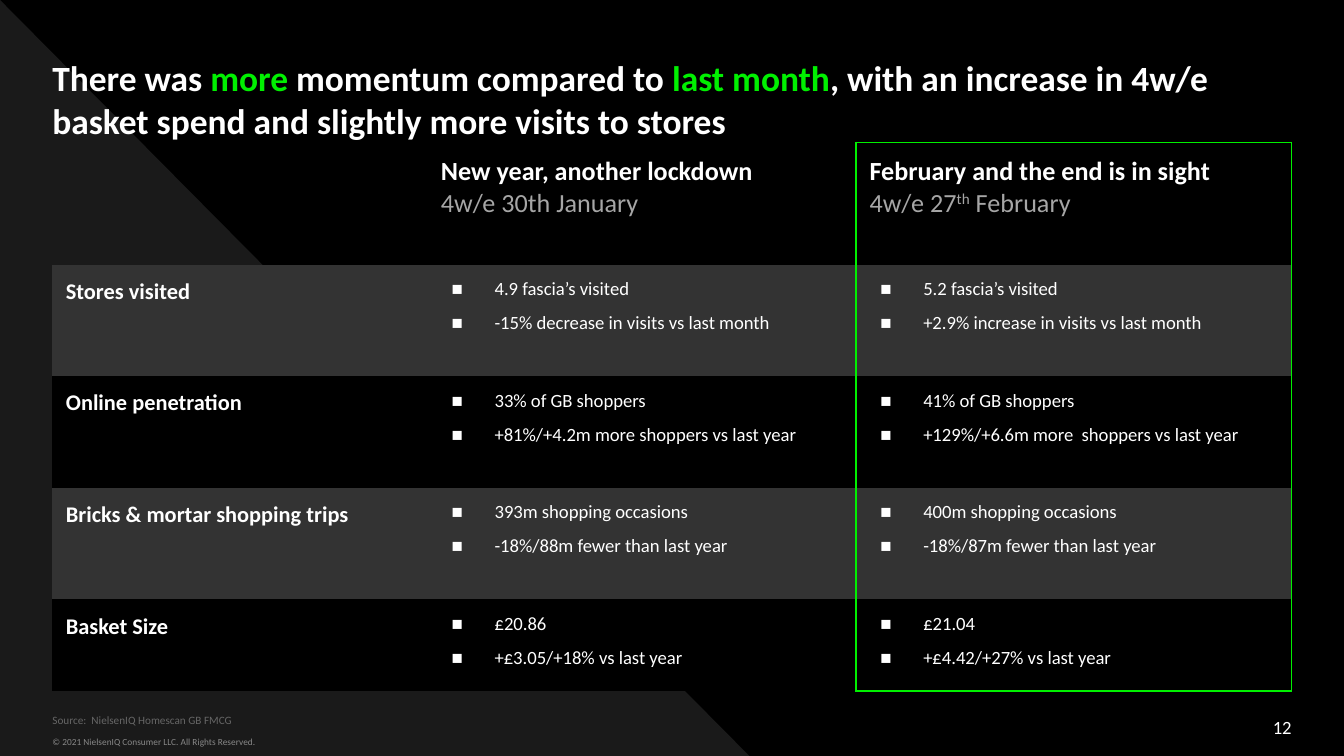
from lxml import etree
from pptx import Presentation
from pptx.dml.color import RGBColor
from pptx.enum.shapes import MSO_SHAPE
from pptx.enum.text import MSO_ANCHOR, PP_ALIGN
from pptx.oxml.ns import qn
from pptx.util import Inches, Pt

TRIANGLE = MSO_SHAPE.RIGHT_TRIANGLE
TOP, MIDDLE = MSO_ANCHOR.TOP, MSO_ANCHOR.MIDDLE
LEFT, RIGHT = PP_ALIGN.LEFT, PP_ALIGN.RIGHT
FONT = "Calibri"
NO_STYLE = "{2D5ABB26-0587-4C30-8999-92F81FD0307C}"
COLORS = {
    "black": "000000", "triangle": "1A1A1A", "band": "333333", "white": "FFFFFF",
    "green": "00F000", "period": "A6A6A6", "source": "666666", "copyright": "888888",
}

TITLE = [
    ("There was ", "white"), ("more", "green"), (" momentum compared to ", "white"),
    ("last month", "green"),
    (", with an increase in 4w/e basket spend and slightly more visits to stores", "white"),
]
SOURCE = "Source:  NielsenIQ Homescan GB FMCG"
COPYRIGHT = "© 2021 NielsenIQ Consumer LLC. All Rights Reserved."
PAGE = "12"
HEADERS = [
    ("New year, another lockdown", ["4w/e 30th January"]),
    ("February and the end is in sight", ["4w/e 27", "th", " February"]),
]
ROWS = [
    ("Stores visited",
     ["4.9 fascia’s visited", "-15% decrease in visits vs last month"],
     ["5.2 fascia’s visited", "+2.9% increase in visits vs last month"]),
    ("Online penetration",
     ["33% of GB shoppers", "+81%/+4.2m more shoppers vs last year"],
     ["41% of GB shoppers", "+129%/+6.6m more  shoppers vs last year"]),
    ("Bricks & mortar shopping trips",
     ["393m shopping occasions", "-18%/88m fewer than last year"],
     ["400m shopping occasions", "-18%/87m fewer than last year"]),
    ("Basket Size",
     ["£20.86", "+£3.05/+18% vs last year"],
     ["£21.04", "+£4.42/+27% vs last year"]),
]
SLIDE_WIDTH = 10
MARGIN, TABLE_TOP = 0.39, 1.06
COL_WIDTHS = [2.79, 3.19, 3.24]
ROW_HEIGHTS = [0.91, 0.83, 0.83, 0.83, 0.68]
WIDTH = sum(COL_WIDTHS)


def rgb(name):
    return RGBColor.from_string(COLORS[name])


def add_run(p, text, size, color, bold=False):
    r = p.add_run()
    r.text = text
    r.font.name, r.font.size, r.font.bold = FONT, Pt(size), bold
    r.font.color.rgb = rgb(color)
    return r


def add_text(s, box, runs, size, inset, anchor=TOP, align=LEFT, bold=False):
    tf = s.shapes.add_textbox(*[Inches(v) for v in box]).text_frame
    tf.word_wrap = True
    tf.vertical_anchor = anchor
    tf.margin_left = tf.margin_right = 0
    tf.margin_top = tf.margin_bottom = Inches(inset)
    p = tf.paragraphs[0]
    p.alignment = align
    for text, color in runs:
        add_run(p, text, size, color, bold)


def add_bullet(p):
    pPr = p._p.get_or_add_pPr()
    pPr.set("marL", str(Inches(0.4)))
    pPr.set("indent", str(Inches(-0.32)))
    clr = etree.SubElement(pPr, qn("a:buClr"))
    etree.SubElement(clr, qn("a:srgbClr"), val=COLORS["white"])
    etree.SubElement(pPr, qn("a:buFont"), typeface="Arial")
    etree.SubElement(pPr, qn("a:buChar"), char="■")


def add_border(cell, sides):
    tcPr = cell._tc.get_or_add_tcPr()
    for side in sides:
        ln = etree.SubElement(tcPr, qn(f"a:ln{side}"), w=str(Pt(1)))
        fill = etree.SubElement(ln, qn("a:solidFill"))
        etree.SubElement(fill, qn("a:srgbClr"), val=COLORS["green"])


def fill_header(cell, heading, period):
    tf = cell.text_frame
    add_run(tf.paragraphs[0], heading, 14, "white", True)
    p = tf.add_paragraph()
    for text in period:
        r = add_run(p, text, 14, "period")
        if text == "th":
            r._r.get_or_add_rPr().set("baseline", "30000")


def fill_bullets(cell, items):
    tf = cell.text_frame
    for i, item in enumerate(items):
        p = tf.add_paragraph() if i else tf.paragraphs[0]
        add_bullet(p)
        if i:
            p.space_before = Pt(6)
        add_run(p, item, 10, "white")


def add_comparison(s):
    frame = s.shapes.add_table(
        len(ROW_HEIGHTS), len(COL_WIDTHS), Inches(MARGIN), Inches(TABLE_TOP),
        Inches(WIDTH), Inches(sum(ROW_HEIGHTS)))
    table = frame.table
    table.first_row = table.horz_banding = False
    table._tbl.tblPr[0].text = NO_STYLE
    for col, width in zip(table.columns, COL_WIDTHS):
        col.width = Inches(width)
    last = len(ROW_HEIGHTS) - 1
    for i, height in enumerate(ROW_HEIGHTS):
        table.rows[i].height = Inches(height)
        add_border(table.cell(i, 1), "R")
        add_border(table.cell(i, 2), "LR" + ("T" if i == 0 else "B" if i == last else ""))
        for cell in table.rows[i].cells:
            cell.margin_left = cell.margin_right = Inches(0.1)
            cell.margin_top = cell.margin_bottom = Inches(0.1)
            if i == 0:
                cell.fill.background()
            else:
                cell.fill.solid()
                cell.fill.fore_color.rgb = rgb("band" if i % 2 else "black")
    for j, (heading, period) in enumerate(HEADERS, 1):
        fill_header(table.cell(0, j), heading, period)
    for i, (label, *months) in enumerate(ROWS, 1):
        add_run(table.cell(i, 0).text_frame.paragraphs[0], label, 12, "white", True)
        for j, items in enumerate(months, 1):
            fill_bullets(table.cell(i, j), items)


def main():
    prs = Presentation()
    prs.slide_width, prs.slide_height = Inches(SLIDE_WIDTH), Inches(SLIDE_WIDTH * 9 / 16)
    s = prs.slides.add_slide(prs.slide_layouts[6])
    s.background.fill.solid()
    s.background.fill.fore_color.rgb = rgb("black")

    triangle = s.shapes.add_shape(TRIANGLE, 0, 0, Inches(5.59), Inches(5.64))
    triangle.shadow.inherit = False
    triangle.fill.solid()
    triangle.fill.fore_color.rgb = rgb("triangle")
    triangle.line.fill.background()

    add_text(s, (MARGIN, 5.43, 5.54, 0.2), [(COPYRIGHT, "copyright")], 5, 0.05)
    add_text(s, (7.36, 5.26, 2.25, 0.3), [(PAGE, "white")], 10, 0.05, MIDDLE, RIGHT)
    add_text(s, (MARGIN, 5.31, 8.92, 0.2), [(SOURCE, "source")], 6, 0)
    add_text(s, (MARGIN, 0.32, WIDTH, 0.74), TITLE, 19, 0.1, bold=True)
    add_comparison(s)
    prs.save("out.pptx")


if __name__ == "__main__":
    main()
